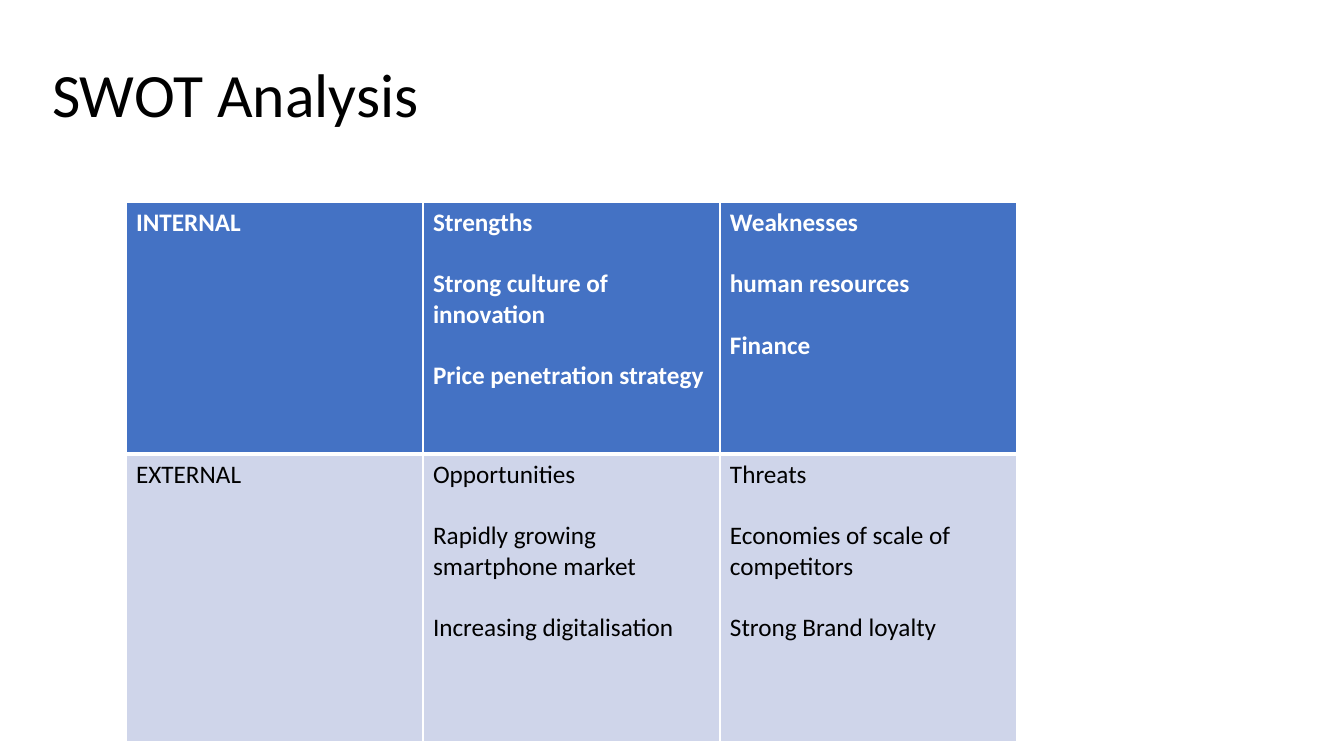
import pptx
import pptx.dml.color
import pptx.enum.text
import pptx.oxml.ns
import pptx.util
from lxml import etree

TITLE = "SWOT Analysis"
ROWS = [
    {
        "height": 252, "fill": "header", "ink": "white", "bold": True,
        "cells": [
            ["INTERNAL"],
            ["Strengths", "Strong culture of innovation", "Price penetration strategy"],
            ["Weaknesses", "human resources", "Finance"],
        ],
    },
    {
        "height": 288, "fill": "band", "ink": "black", "bold": False,
        "cells": [
            ["EXTERNAL"],
            ["Opportunities", "Rapidly growing smartphone market", "Increasing digitalisation"],
            ["Threats", "Economies of scale of competitors", "Strong Brand loyalty"],
        ],
    },
]
COLORS = {"white": "FFFFFF", "black": "000000", "header": "4472C4", "band": "CFD5EA"}
FONT = "Calibri"
PAGE_SIZE = (1344, 756)
TITLE_BOX = (42, 25, 1068, 146)
TABLE_LEFT, TABLE_TOP, COLUMN_WIDTH = 126, 202, 297
COLUMN_COUNT = len(ROWS[0]["cells"])
PARAGRAPH_GAP = pptx.util.Pt(22)
THIN, THICK = pptx.util.Pt(1), pptx.util.Pt(3)


def px(length):
    return pptx.util.Emu(round(length * 914400 / 100.8))


def color(name):
    return pptx.dml.color.RGBColor.from_string(COLORS[name])


def style_run(span, size, ink, bold=False):
    span.font.name = FONT
    span.font.size = pptx.util.Pt(size)
    span.font.bold = bold
    span.font.color.rgb = color(ink)


def set_borders(cell, widths):
    """Draw white borders; widths maps L, R, T and B to line widths."""
    properties = cell._tc.get_or_add_tcPr()
    for side, width in widths.items():
        line = etree.SubElement(properties, pptx.oxml.ns.qn(f"a:ln{side}"), w=str(width))
        fill = etree.SubElement(line, pptx.oxml.ns.qn("a:solidFill"))
        etree.SubElement(fill, pptx.oxml.ns.qn("a:srgbClr"), val=COLORS["white"])


def fill_cell(cell, lines, row):
    cell.fill.solid()
    cell.fill.fore_color.rgb = color(row["fill"])
    cell.text_frame.text = "\n".join(lines)
    for para in cell.text_frame.paragraphs:
        style_run(para.runs[0], 18, row["ink"], row["bold"])
    for para in cell.text_frame.paragraphs[:-1]:
        para.space_after = PARAGRAPH_GAP


def add_title(page):
    title = page.shapes.title
    title.left, title.top, title.width, title.height = map(px, TITLE_BOX)
    frame = title.text_frame
    frame.text = TITLE
    frame.vertical_anchor = pptx.enum.text.MSO_ANCHOR.MIDDLE
    para = frame.paragraphs[0]
    para.alignment = pptx.enum.text.PP_ALIGN.LEFT
    para.line_spacing = 0.9
    style_run(para.runs[0], 44, "black")


def add_swot_table(page):
    table = page.shapes.add_table(
        len(ROWS), COLUMN_COUNT, px(TABLE_LEFT), px(TABLE_TOP),
        px(COLUMN_WIDTH * COLUMN_COUNT), px(sum(row["height"] for row in ROWS)),
    ).table
    for column in table.columns:
        column.width = px(COLUMN_WIDTH)
    for row_index, row in enumerate(ROWS):
        table.rows[row_index].height = px(row["height"])
        top = THICK if row_index else THIN
        bottom = THIN if row_index else THICK
        for column_index, lines in enumerate(row["cells"]):
            cell = table.cell(row_index, column_index)
            set_borders(cell, {"L": THIN, "R": THIN, "T": top, "B": bottom})
            fill_cell(cell, lines, row)


def main():
    deck = pptx.Presentation()
    deck.slide_width, deck.slide_height = map(px, PAGE_SIZE)
    page = deck.slides.add_slide(deck.slide_layouts[5])
    add_title(page)
    add_swot_table(page)
    deck.save("out.pptx")


if __name__ == "__main__":
    main()
